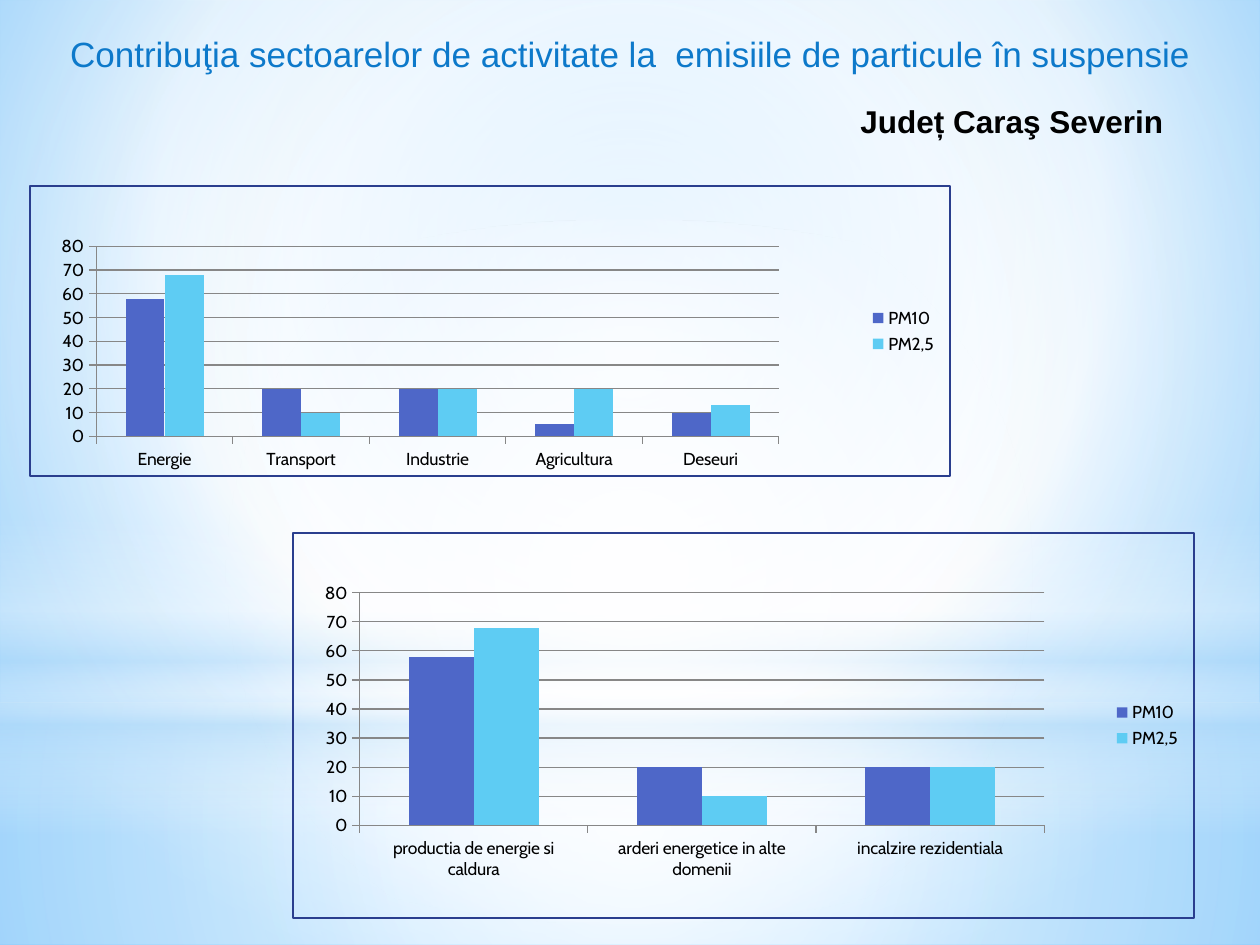
from dataclasses import dataclass
from typing import Optional

from lxml import etree
from pptx import Presentation, util as u
from pptx.chart.data import CategoryChartData
from pptx.dml.color import RGBColor
from pptx.enum import chart as ec, shapes, text
from pptx.oxml import parse_xml
from pptx.oxml.ns import nsdecls, qn

PX = 914400 / 126  # EMU in one px


@dataclass(frozen=True)
class Theme:
    title: str = "0D79CA"
    ink: str = "000000"
    border: str = "2A3E8E"
    grid: str = "878787"
    series: tuple = ("4E67C8", "5ECCF3")
    text_font: str = "Arial"
    chart_font: str = "Cabin"
    title_size: int = 20
    county_size: int = 18
    chart_size: int = 10


@dataclass(frozen=True)
class Box:
    left: int
    top: int
    width: int
    height: int

    def emu(self) -> tuple:
        return tuple(u.Emu(round(value * PX)) for value in
                     (self.left, self.top, self.width, self.height))


@dataclass(frozen=True)
class Gradient:
    stops: tuple  # (position %, colour, opacity %)
    focus: Optional[tuple] = (50, 50, 50, 50)  # None: straight, top to bottom


@dataclass(frozen=True)
class Layer:
    box: Box
    gradient: Gradient
    kind: shapes.MSO_SHAPE = shapes.MSO_SHAPE.RECTANGLE


@dataclass(frozen=True)
class Label:
    box: Box
    words: str
    size: int
    colour: str
    bold: bool = False
    wrap: bool = True
    align: text.PP_ALIGN = text.PP_ALIGN.LEFT


@dataclass(frozen=True)
class SectorChart:
    box: Box
    plot: tuple  # x, y, width, height as shares of the chart
    categories: tuple
    pm10: tuple
    pm25: tuple


THEME = Theme()

BACKGROUND = Gradient(((0, "9ED5FF", 100), (60, "FFFFFF", 100), (100, "5BB9FF", 100)),
                      (20, 10, 20, 60))
LAYERS = (
    Layer(Box(0, 703, 1260, 242),
          Gradient(((0, "FFFFFF", 91), (37, "FFFFFF", 76), (100, "B4DCFA", 79)))),
    Layer(Box(0, 0, 1260, 703),
          Gradient(((0, "FFFFFF", 89), (48, "FFFFFF", 62), (100, "B4DCFA", 79)))),
    Layer(Box(0, 519, 1260, 315),
          Gradient(((0, "FFFFFF", 0), (29, "FFFFFF", 30), (45, "B4DCFA", 40),
                    (55, "FFFFFF", 26), (65, "B4DCFA", 60), (100, "FFFFFF", 0)), None)),
    Layer(Box(0, 220, 1260, 703),
          Gradient(((0, "FFFFFF", 100), (56, "FFFFFF", 0))), shapes.MSO_SHAPE.OVAL),
)
COUNTY = Label(Box(848, 96, 331, 50), "Județ Caraş Severin",
               THEME.county_size, THEME.ink, bold=True, wrap=False)
TITLE = Label(Box(25, 26, 1211, 55),
              "Contribuţia sectoarelor de activitate la  emisiile de particule în suspensie",
              THEME.title_size, THEME.title, align=text.PP_ALIGN.CENTER)
CHARTS = (
    SectorChart(Box(29, 185, 922, 292), (0.072, 0.208, 0.742, 0.656),
                ("Energie", "Transport", "Industrie", "Agricultura", "Deseuri"),
                (58, 20, 20, 5, 10), (68, 10, 20, 20, 13)),
    SectorChart(Box(292, 532, 903, 387), (0.074, 0.155, 0.76, 0.605),
                ("productia de energie si caldura", "arderi energetice in alte domenii",
                 "incalzire rezidentiala"),
                (58, 20, 20), (68, 10, 20)),
)


def rgb(colour: str) -> RGBColor:
    return RGBColor.from_string(colour)


def paint_gradient(solid_fill, gradient: Gradient) -> None:
    """Put a gradient in the place of a solid fill."""
    stops = "".join(
        f'<a:gs pos="{position * 1000}"><a:srgbClr val="{colour}">'
        f'<a:alpha val="{opacity * 1000}"/></a:srgbClr></a:gs>'
        for position, colour, opacity in gradient.stops)
    if gradient.focus is None:
        direction = '<a:lin ang="5400000" scaled="0"/>'
    else:
        sides = " ".join(f'{side}="{share * 1000}"'
                         for side, share in zip("ltrb", gradient.focus))
        direction = f'<a:path path="circle"><a:fillToRect {sides}/></a:path>'
    fill = parse_xml(f'<a:gradFill {nsdecls("a")} rotWithShape="1">'
                     f'<a:gsLst>{stops}</a:gsLst>{direction}</a:gradFill>')
    solid_fill.getparent().replace(solid_fill, fill)


def draw_layer(slide, layer: Layer) -> None:
    shape = slide.shapes.add_shape(layer.kind, *layer.box.emu())
    shape.shadow.inherit = False
    shape.line.fill.background()
    shape.fill.solid()
    paint_gradient(shape.element.xpath("./p:spPr/a:solidFill")[0], layer.gradient)


def draw_label(slide, label: Label) -> None:
    frame = slide.shapes.add_textbox(*label.box.emu()).text_frame
    frame.word_wrap = label.wrap
    frame.auto_size = text.MSO_AUTO_SIZE.SHAPE_TO_FIT_TEXT
    paragraph = frame.paragraphs[0]
    paragraph.alignment = label.align
    run = paragraph.add_run()
    run.text = label.words
    run.font.name = THEME.text_font
    run.font.size = u.Pt(label.size)
    run.font.bold = label.bold
    run.font.color.rgb = rgb(label.colour)


def frame_chart(chart, plot: tuple) -> None:
    """Fix the inner plot area and outline the chart, with no fill."""
    plot_area = chart.element.chart.plotArea
    for old in plot_area.findall(qn("c:layout")):
        plot_area.remove(old)
    layout = etree.Element(qn("c:layout"))
    manual = etree.SubElement(layout, qn("c:manualLayout"))
    settings = [("layoutTarget", "inner"), ("xMode", "edge"), ("yMode", "edge"),
                *zip("xywh", plot)]
    for tag, value in settings:
        etree.SubElement(manual, qn(f"c:{tag}")).set("val", str(value))
    plot_area.insert(0, layout)
    outline = parse_xml(
        f'<c:spPr {nsdecls("c", "a")}><a:noFill/><a:ln w="{u.Pt(1.25)}"><a:solidFill>'
        f'<a:srgbClr val="{THEME.border}"/></a:solidFill></a:ln></c:spPr>')
    chart.element.find(qn("c:txPr")).addprevious(outline)


def draw_chart(slide, sector_chart: SectorChart) -> None:
    data = CategoryChartData(number_format="General")
    data.categories = sector_chart.categories
    data.add_series("PM10", sector_chart.pm10)
    data.add_series("PM2,5", sector_chart.pm25)
    chart = slide.shapes.add_chart(ec.XL_CHART_TYPE.COLUMN_CLUSTERED,
                                   *sector_chart.box.emu(), data).chart
    chart.has_title = False
    chart.font.name = THEME.chart_font
    chart.font.size = u.Pt(THEME.chart_size)
    chart.font.color.rgb = rgb(THEME.ink)

    # Legend and columns
    chart.has_legend = True
    chart.legend.position = ec.XL_LEGEND_POSITION.RIGHT
    chart.legend.include_in_layout = False
    columns = chart.plots[0]
    columns.gap_width = 150
    columns.overlap = 0
    columns.vary_by_categories = False
    for series, colour in zip(columns.series, THEME.series):
        series.format.fill.solid()
        series.format.fill.fore_color.rgb = rgb(colour)

    # Axes
    values = chart.value_axis
    values.minimum_scale, values.maximum_scale, values.major_unit = 0, 80, 10
    values.has_major_gridlines = True
    for axis in (chart.category_axis, values):
        axis.major_tick_mark = ec.XL_TICK_MARK.OUTSIDE
    for part in (chart.category_axis, values, values.major_gridlines):
        part.format.line.color.rgb = rgb(THEME.grid)
        part.format.line.width = u.Pt(0.75)
    frame_chart(chart, sector_chart.plot)


def main() -> None:
    presentation = Presentation()
    presentation.slide_width, presentation.slide_height = u.Inches(10), u.Inches(7.5)
    slide = presentation.slides.add_slide(presentation.slide_layouts[6])

    # Backdrop
    slide.background.fill.solid()
    paint_gradient(slide.element.xpath(".//p:bgPr/a:solidFill")[0], BACKGROUND)
    for layer in LAYERS:
        draw_layer(slide, layer)

    # Content
    draw_label(slide, COUNTY)
    for sector_chart in CHARTS:
        draw_chart(slide, sector_chart)
    draw_label(slide, TITLE)
    presentation.save("out.pptx")


if __name__ == "__main__":
    main()
